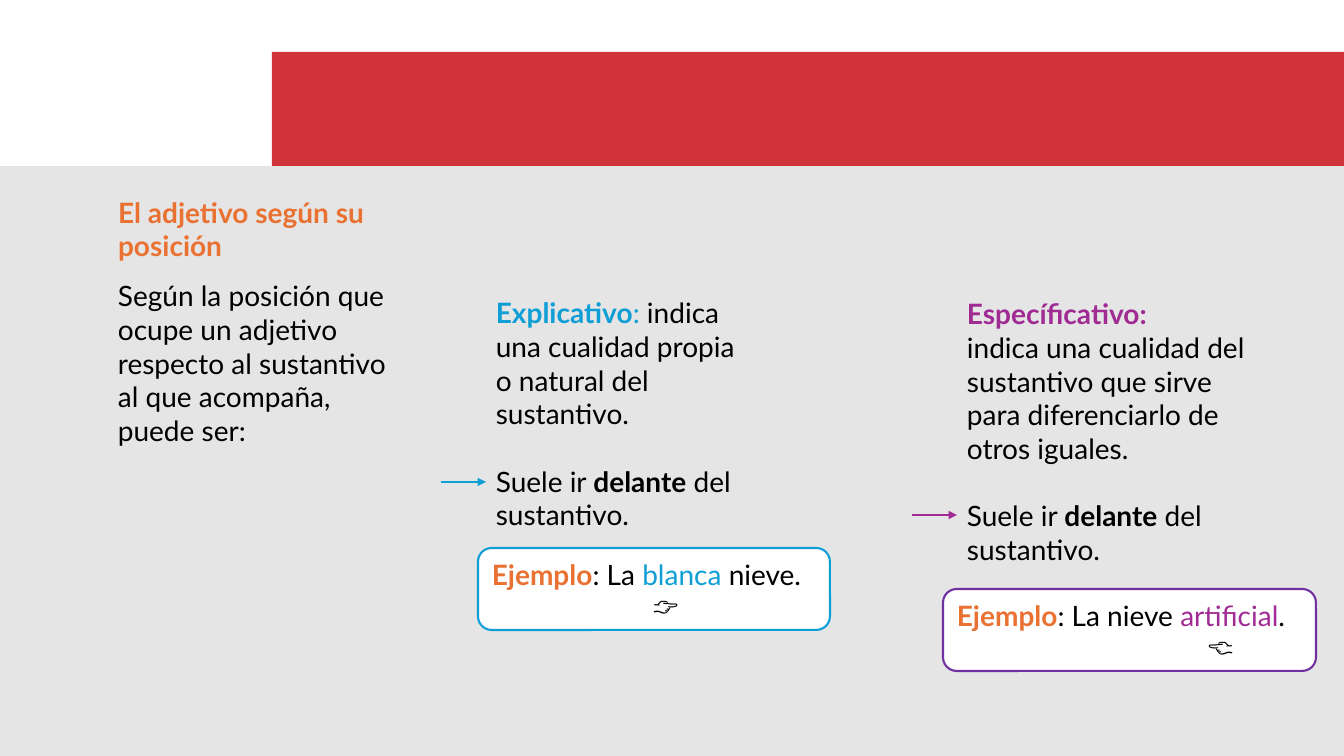
from lxml.etree import SubElement
from pptx import Presentation
from pptx.dml.color import RGBColor
from pptx.enum.shapes import MSO_CONNECTOR, MSO_SHAPE
from pptx.enum.text import MSO_ANCHOR, MSO_AUTO_SIZE, PP_ALIGN
from pptx.oxml.ns import qn
from pptx.util import Emu, Pt

PX = 9071.43
FONT = "Lato"
WHITE = RGBColor(0xFF, 0xFF, 0xFF)
BLACK = RGBColor(0, 0, 0)
GREY = RGBColor(0xE5, 0xE5, 0xE5)
RED = RGBColor(0xD0, 0x33, 0x3A)
ORANGE = RGBColor(0xE9, 0x71, 0x32)
BLUE = RGBColor(0x0F, 0x9E, 0xD5)
MAGENTA = RGBColor(0xA0, 0x2B, 0x93)
PURPLE = RGBColor(0x70, 0x30, 0xA0)


def px(value):
    return Emu(round(value * PX))


def place(*lengths):
    return [px(length) for length in lengths]


def write(paragraph, runs, size=20):
    paragraph.alignment = PP_ALIGN.LEFT
    paragraph.font.name = FONT
    paragraph.font.size = Pt(size)
    for text, color, bold in runs:
        run = paragraph.add_run()
        run.text = text
        run.font.color.rgb = color
        run.font.bold = bold


def add_box(slide, kind, box, fill, line=None):
    shape = slide.shapes.add_shape(kind, *place(*box))
    shape.shadow.inherit = False
    shape.fill.solid()
    shape.fill.fore_color.rgb = fill
    if line is None:
        shape.line.fill.background()
    else:
        shape.line.color.rgb = line
        shape.line.width = Pt(1.5)
    return shape


def add_text(slide, box, paragraphs):
    frame = slide.shapes.add_textbox(*place(*box)).text_frame
    frame.word_wrap = True
    for index, runs in enumerate(paragraphs):
        paragraph = frame.add_paragraph() if index else frame.paragraphs[0]
        write(paragraph, runs)
    return frame


def add_background(slide):
    add_box(slide, MSO_SHAPE.RECTANGLE, (0, 166, 1344, 590), GREY)
    add_box(slide, MSO_SHAPE.RECTANGLE, (272, 52, 1072, 114), RED)


def add_introduction(slide, left, top, width):
    title = slide.shapes.title
    title.element.getparent().append(title.element)
    title.left, title.top, title.width, title.height = place(left, top, width, 84)
    frame = title.text_frame
    frame.auto_size = MSO_AUTO_SIZE.NONE
    frame.vertical_anchor = MSO_ANCHOR.TOP
    write(frame.paragraphs[0], [("El adjetivo según su posición", ORANGE, True)])
    add_text(slide, (left, top + 84, width, 178), [
        [("Según la posición que ocupe un adjetivo respecto al sustantivo "
          "al que acompaña, puede ser:", BLACK, False)],
    ])


def add_arrow(slide, left, y, color):
    arrow = slide.shapes.add_connector(
        MSO_CONNECTOR.STRAIGHT, *place(left, y, left + 45, y))
    arrow.line.color.rgb = color
    arrow.line.width = Pt(1.5)
    SubElement(arrow.line._get_or_add_ln(), qn("a:tailEnd"), type="triangle")
    SubElement(arrow.element.spPr, qn("a:effectLst"))


def add_example(slide, box, line, runs, hand, indent):
    shape = add_box(slide, MSO_SHAPE.ROUNDED_RECTANGLE, box, WHITE, line)
    frame = shape.text_frame
    frame.word_wrap = True
    frame.vertical_anchor = MSO_ANCHOR.MIDDLE
    write(frame.paragraphs[0], [("Ejemplo", ORANGE, True)] + runs)
    pointer = frame.add_paragraph()
    pointer._p.get_or_add_pPr().set("marL", str(px(indent)))
    write(pointer, [(hand, BLACK, False)], 18)


def add_kind(slide, box, definition, arrow_drop, color):
    left, top, width, height = box
    position = [("Suele ir ", BLACK, False), ("delante", BLACK, True),
                (" del sustantivo.", BLACK, False)]
    frame = add_text(slide, box, definition + [position])
    frame.paragraphs[-1].space_before = Pt(24)
    add_arrow(slide, left - 45, top + arrow_drop, color)


def build_slide(presentation):
    slide = presentation.slides.add_slide(presentation.slide_layouts[5])
    add_background(slide)
    add_introduction(slide, 108, 190, 311)
    add_kind(slide, (486, 291, 260, 247), [
        [("Explicativo", BLUE, True), (": ", BLUE, False),
         ("indica una cualidad propia o natural del sustantivo.", BLACK, False)],
    ], 191, BLUE)
    add_example(slide, (478, 548, 352, 82), BLUE, [
        (": La ", BLACK, False), ("blanca ", BLUE, False), ("nieve.", BLACK, False),
    ], "👉", 161)
    add_kind(slide, (957, 292, 311, 280), [
        [("Específicativo:", MAGENTA, True)],
        [("indica una cualidad del sustantivo que sirve para diferenciarlo "
          "de otros iguales.", BLACK, False)],
    ], 223, MAGENTA)
    add_example(slide, (943, 589, 373, 82), PURPLE, [
        (": La nieve ", BLACK, False), ("artificial", MAGENTA, False),
        (".", BLACK, False),
    ], "👈", 251)


def main():
    presentation = Presentation()
    presentation.slide_width, presentation.slide_height = place(1344, 756)
    build_slide(presentation)
    presentation.save("out.pptx")


if __name__ == "__main__":
    main()
